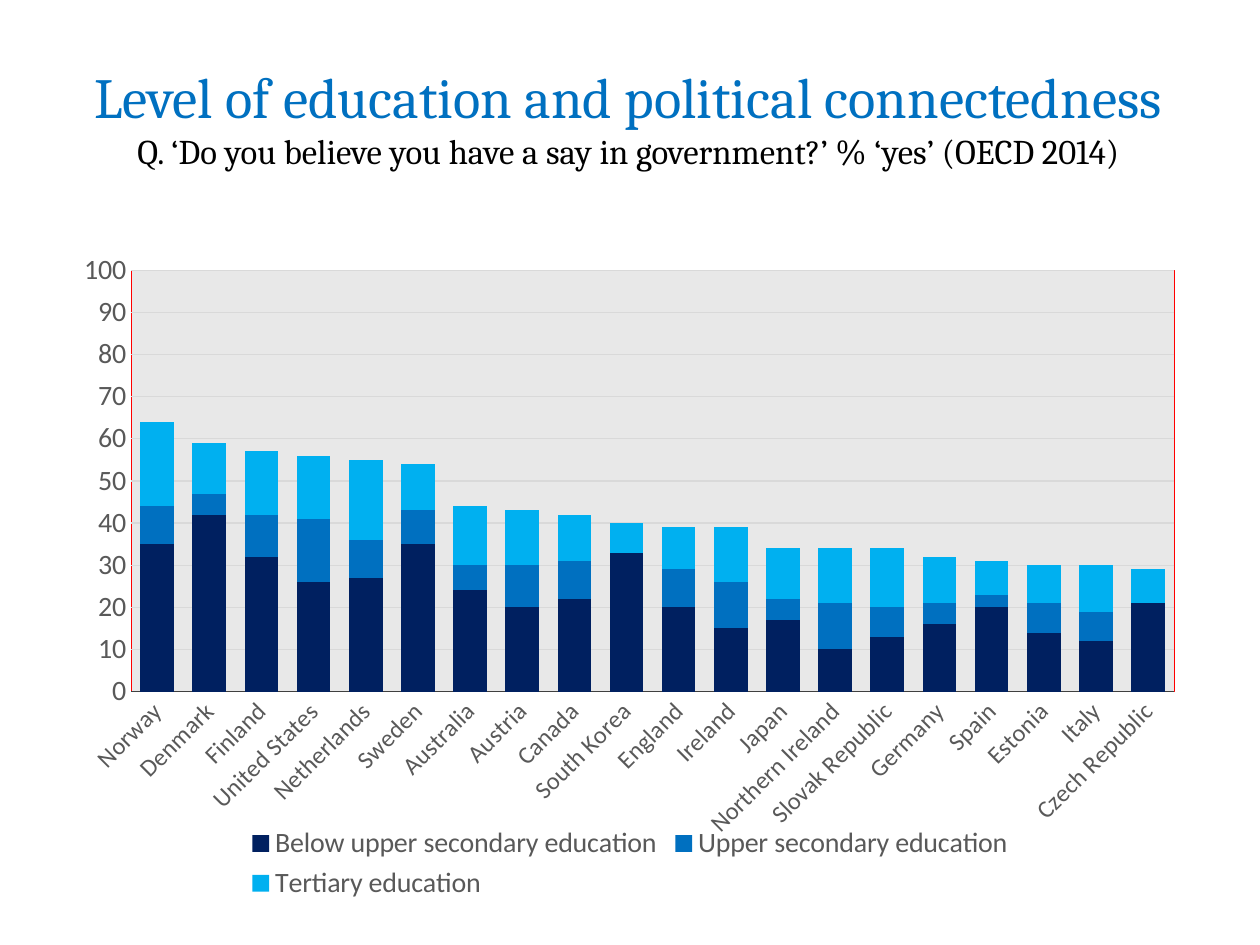
from typing import NamedTuple

from lxml import etree
from pptx import Presentation
from pptx.chart.data import CategoryChartData
from pptx.dml.color import RGBColor
from pptx.enum.chart import XL_CHART_TYPE, XL_LEGEND_POSITION, XL_TICK_MARK
from pptx.enum.text import MSO_ANCHOR, PP_ALIGN
from pptx.oxml import parse_xml
from pptx.oxml.ns import nsdecls, qn
from pptx.util import Inches, Pt

STACKED = XL_CHART_TYPE.COLUMN_STACKED
LEGEND_BOTTOM = XL_LEGEND_POSITION.BOTTOM
NO_TICK = XL_TICK_MARK.NONE
MIDDLE = MSO_ANCHOR.MIDDLE
CENTER = PP_ALIGN.CENTER

COLORS = {
    "navy": "002060", "blue": "0070C0", "sky": "00B0F0",
    "black": "000000", "label": "595959", "axis": "404040",
    "grid": "D9D9D9", "border": "FF0000",
}


class EducationLevel(NamedTuple):
    name: str
    color: str
    shares: tuple


class TitleLine(NamedTuple):
    text: str
    size: float
    color: str


COUNTRIES = (
    "Norway", "Denmark", "Finland", "United States", "Netherlands", "Sweden",
    "Australia", "Austria", "Canada", "South Korea", "England", "Ireland",
    "Japan", "Northern Ireland", "Slovak Republic", "Germany", "Spain",
    "Estonia", "Italy", "Czech Republic",
)
LEVELS = (
    EducationLevel("Below upper secondary education", "navy",
                   (35, 42, 32, 26, 27, 35, 24, 20, 22, 33,
                    20, 15, 17, 10, 13, 16, 20, 14, 12, 21)),
    EducationLevel("Upper secondary education", "blue",
                   (9, 5, 10, 15, 9, 8, 6, 10, 9, None,
                    9, 11, 5, 11, 7, 5, 3, 7, 7, None)),
    EducationLevel("Tertiary education", "sky",
                   (20, 12, 15, 15, 19, 11, 14, 13, 11, 7,
                    10, 13, 12, 13, 14, 11, 8, 9, 11, 8)),
)
TITLE_LINES = (
    TitleLine("Level of education and political connectedness", 32.4, "blue"),
    TitleLine("Q. ‘Do you believe you have a say in government?’ % ‘yes’ (OECD 2014)",
              19.8, "black"),
)


def rgb(name: str) -> RGBColor:
    return RGBColor.from_string(COLORS[name])


def style_font(font, size: float, color: str, face: str = "Calibri") -> None:
    font.size = Pt(size)
    font.name = face
    font.color.rgb = rgb(color)


def style_line(line, color: str, width: float) -> None:
    line.color.rgb = rgb(color)
    line.width = Pt(width)


def add_title(slide, lines: tuple) -> None:
    box = slide.shapes.add_textbox(Inches(0.14), Inches(0.3), Inches(9.69), Inches(1.25))
    frame = box.text_frame
    frame.word_wrap = True
    frame.vertical_anchor = MIDDLE
    paragraph = frame.paragraphs[0]
    paragraph.alignment = CENTER
    for index, line in enumerate(lines):
        if index:
            paragraph.add_line_break()
        run = paragraph.add_run()
        run.text = line.text
        style_font(run.font, line.size, line.color, "Cambria")


def format_plot_area(chart) -> None:
    """Place the inner plot area and give it a translucent fill and thin border."""
    plot_area = chart.element.find(".//" + qn("c:plotArea"))
    for old in plot_area.findall(qn("c:layout")):
        plot_area.remove(old)
    layout = etree.Element(qn("c:layout"))
    manual = etree.SubElement(layout, qn("c:manualLayout"))
    settings = {"layoutTarget": "inner", "xMode": "edge", "yMode": "edge",
                "x": "0.06", "y": "0.05", "w": "0.92", "h": "0.63"}
    for tag, value in settings.items():
        etree.SubElement(manual, qn(f"c:{tag}")).set("val", value)
    plot_area.insert(0, layout)
    plot_area.append(parse_xml(
        f'<c:spPr {nsdecls("c", "a")}>'
        f'<a:solidFill><a:srgbClr val="{COLORS["grid"]}"><a:alpha val="60000"/>'
        '</a:srgbClr></a:solidFill>'
        f'<a:ln w="{Pt(0.25)}"><a:solidFill><a:srgbClr val="{COLORS["border"]}"/>'
        '</a:solidFill></a:ln></c:spPr>'))


def add_education_chart(slide, levels: tuple) -> None:
    data = CategoryChartData()
    data.categories = COUNTRIES
    for level in levels:
        data.add_series(level.name, level.shares)
    chart = slide.shapes.add_chart(STACKED, Inches(0.5), Inches(1.88),
                                   Inches(9), Inches(5.31), data).chart
    chart.has_title = False
    style_font(chart.font, 10, "black")

    # Stacked columns
    plot = chart.plots[0]
    plot.gap_width = 55
    plot.overlap = 100
    plot.vary_by_categories = False
    for series, level in zip(plot.series, levels):
        series.format.fill.solid()
        series.format.fill.fore_color.rgb = rgb(level.color)
        series.invert_if_negative = False

    # Axes
    countries, percent = chart.category_axis, chart.value_axis
    for axis, size in ((countries, 14), (percent, 16)):
        axis.major_tick_mark = NO_TICK
        axis.minor_tick_mark = NO_TICK
        style_font(axis.tick_labels.font, size, "label")
    style_line(countries.format.line, "axis", 0.25)
    body = countries.tick_labels.font._element.getparent().getparent().getparent()
    body.find(qn("a:bodyPr")).set("rot", "-2700000")
    percent.minimum_scale, percent.maximum_scale, percent.major_unit = 0, 100, 10
    percent.tick_labels.number_format = "General"
    percent.tick_labels.number_format_is_linked = False
    percent.format.line.fill.background()
    percent.has_major_gridlines = True
    style_line(percent.major_gridlines.format.line, "grid", 0.75)

    # Legend and plot area
    chart.has_legend = True
    chart.legend.position = LEGEND_BOTTOM
    chart.legend.include_in_layout = False
    style_font(chart.legend.font, 16, "label")
    format_plot_area(chart)


def main() -> None:
    deck = Presentation()
    deck.slide_width, deck.slide_height = Inches(10), Inches(7.5)
    slide = deck.slides.add_slide(deck.slide_layouts[6])
    add_title(slide, TITLE_LINES)
    add_education_chart(slide, LEVELS)
    deck.save("out.pptx")


if __name__ == "__main__":
    main()
